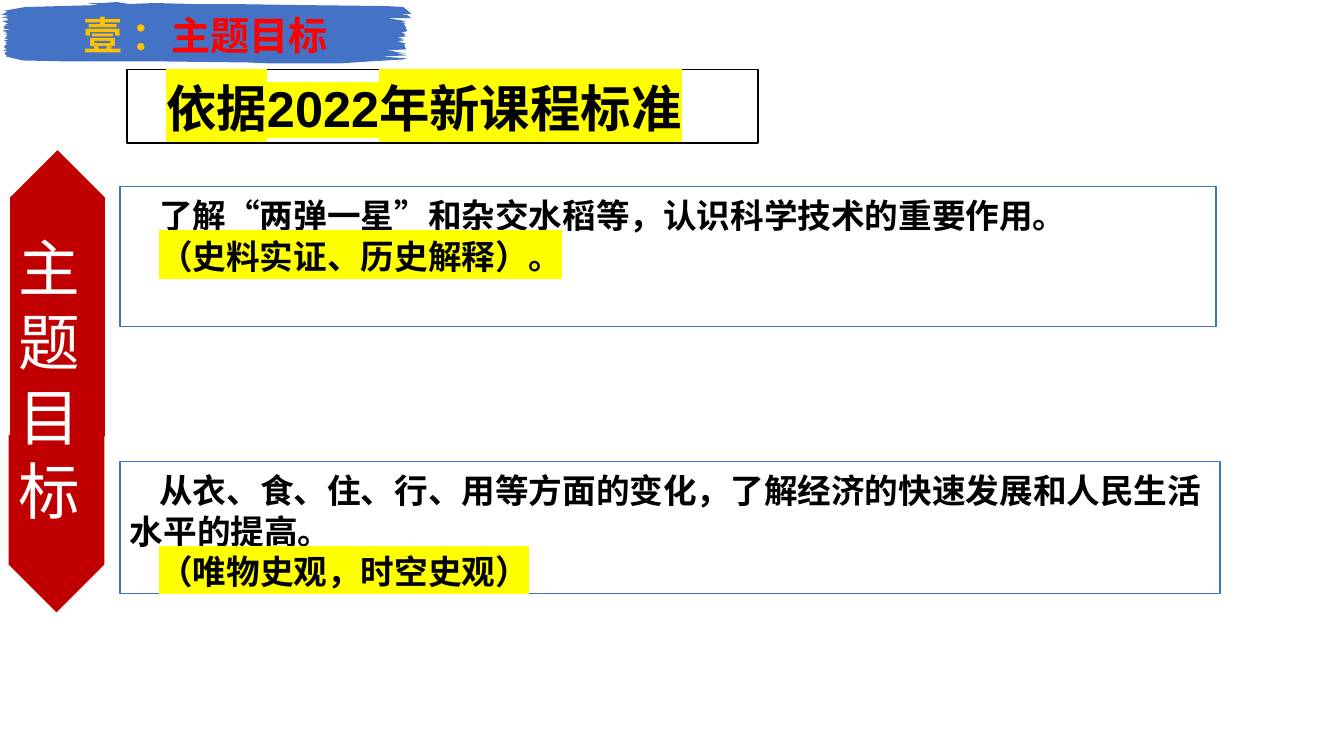
from dataclasses import dataclass

from lxml import etree
from pptx import Presentation
from pptx.dml.color import RGBColor
from pptx.enum.shapes import MSO_SHAPE
from pptx.enum.text import MSO_ANCHOR, PP_ALIGN
from pptx.oxml.ns import qn
from pptx.util import Pt

RECT, PENTAGON = MSO_SHAPE.RECTANGLE, MSO_SHAPE.PENTAGON
TOP, MIDDLE = MSO_ANCHOR.TOP, MSO_ANCHOR.MIDDLE
LEFT, CENTER = PP_ALIGN.LEFT, PP_ALIGN.CENTER
PX = 9144


@dataclass(frozen=True)
class Theme:
    blue: str = "4472C4"
    red: str = "C00000"
    gold: str = "FFC000"
    accent: str = "FF0000"
    ink: str = "000000"
    paper: str = "FFFFFF"
    marker: str = "FFFF00"
    cjk: str = "Noto Sans CJK SC"
    sans: str = "Arial"
    serif: str = "Times New Roman"
    banner: int = 28
    side: int = 44
    title: int = 36
    body: int = 24
    leading: float = 1.2
    indent: int = 29


@dataclass(frozen=True)
class Span:
    text: str
    color: str = ""
    font: str = ""
    marked: bool = False


T = Theme()

BRUSH_EDGE = [
    (1, 17), (7, 18), (8, 20), (2, 21), (5, 22), (9, 24), (5, 24), (7, 25),
    (3, 26), (5, 27), (3, 28), (11, 30), (4, 30), (3, 31), (9, 32), (5, 32),
    (8, 33), (4, 34), (11, 35), (7, 35), (6, 37), (4, 38), (9, 39), (4, 40),
    (8, 42), (5, 42), (7, 44), (5, 45), (4, 47), (7, 48), (5, 48), (7, 49),
    (3, 50), (8, 51), (5, 52), (5, 54), (7, 55), (6, 56), (22, 60), (69, 61),
    (163, 61), (245, 62), (269, 63), (336, 63), (366, 61), (400, 59),
    (404, 58), (378, 56), (404, 55), (393, 53), (403, 53), (388, 51),
    (393, 51), (383, 50), (403, 49), (402, 47), (401, 45), (402, 43),
    (394, 41), (401, 40), (394, 39), (401, 39), (394, 37), (404, 36),
    (400, 35), (402, 34), (398, 32), (404, 31), (401, 24), (402, 23),
    (398, 22), (403, 21), (384, 18), (408, 18), (404, 15), (396, 14),
    (408, 14), (405, 11), (400, 7), (382, 6), (296, 5), (228, 4), (191, 4),
    (154, 3), (128, 4), (116, 2), (101, 3), (86, 3), (98, 5), (25, 7),
    (2, 11), (8, 11), (3, 14), (0, 14), (9, 16),
]


def rgb(value):
    return RGBColor.from_string(value)


def style(sp, fill, line=None):
    sp.shadow.inherit = False
    sp.fill.solid()
    sp.fill.fore_color.rgb = rgb(fill)
    if line:
        sp.line.color.rgb = rgb(line)
        sp.line.width = Pt(1)
    else:
        sp.line.fill.background()
    return sp


def add_block(shapes, kind, box, fill, line=None, rotation=0):
    sp = shapes.add_shape(kind, *(v * PX for v in box))
    sp.rotation = rotation
    return style(sp, fill, line)


def add_brush(shapes, points, fill):
    builder = shapes.build_freeform(*points[0], scale=PX)
    builder.add_line_segments(points[1:], close=True)
    return style(builder.convert_to_shape(), fill)


def set_font(font, rpr, name):
    font.name = name
    etree.SubElement(rpr, qn("a:ea")).set("typeface", T.cjk)


def add_span(p, span):
    r = p.add_run()
    r.text = span.text
    rpr = r._r.get_or_add_rPr()
    if span.color:
        r.font.color.rgb = rgb(span.color)
    if span.marked:
        highlight = etree.SubElement(rpr, qn("a:highlight"))
        etree.SubElement(highlight, qn("a:srgbClr")).set("val", T.marker)
    if span.font:
        set_font(r.font, rpr, span.font)


def write(sp, paragraphs, size, color=T.ink, font=T.cjk, bold=True,
          anchor=TOP, align=LEFT, indent=0, top=8, right=10):
    tf = sp.text_frame
    tf.word_wrap = True
    tf.vertical_anchor = anchor
    tf.margin_top = top * PX
    tf.margin_right = right * PX
    for i, spans in enumerate(paragraphs):
        p = tf.add_paragraph() if i else tf.paragraphs[0]
        p.alignment = align
        p.line_spacing = Pt(round(size * T.leading))
        ppr = p._p.get_or_add_pPr()
        ppr.set("marL", "0")
        ppr.set("indent", str(indent * PX))
        p.font.size = Pt(size)
        p.font.bold = bold
        p.font.color.rgb = rgb(color)
        set_font(p.font, ppr.find(qn("a:defRPr")), font)
        for span in spans:
            add_span(p, span)


def add_side_label(shapes, text):
    group = shapes.add_group_shape().shapes
    add_block(group, PENTAGON, (-85, 244, 284, 94), T.red, rotation=270)
    add_block(group, PENTAGON, (-32, 472, 176, 95), T.red, rotation=90)
    label = group.add_textbox(*(v * PX for v in (9, 142, 73, 261)))
    write(label, [[Span(text)]], T.side, T.paper, bold=False, top=86, right=0)


def add_goal(shapes, box, paragraphs):
    sp = add_block(shapes, RECT, box, T.paper, T.blue)
    write(sp, paragraphs, T.body, indent=T.indent)


def main():
    prs = Presentation()
    prs.slide_width, prs.slide_height = 1333 * PX, 750 * PX
    s = prs.slides.add_slide(prs.slide_layouts[6])

    banner = add_brush(s.shapes, BRUSH_EDGE, T.blue)
    write(banner, [[Span("壹 ："), Span("主题目标", T.accent)]], T.banner,
          T.gold, anchor=MIDDLE, align=CENTER)

    add_side_label(s.shapes, "主题目标")

    title = add_block(s.shapes, RECT, (126, 69, 626, 73), T.paper, T.ink)
    write(title, [[Span("依据2022年新课程标准", marked=True)]], T.title,
          font=T.sans, indent=T.indent)

    add_goal(s.shapes, (119, 185, 1087, 139), [
        [Span("了解“两弹一星”和杂交水稻等，认识科学技术的重要作用。")],
        [Span("（史料实证、历史解释", font=T.serif, marked=True),
         Span("）。", marked=True)],
    ])
    add_goal(s.shapes, (119, 458, 1091, 131), [
        [Span("从衣、食、住、行、用等方面的变化，了解经济的快速发展和人民生活水平的提高。")],
        [Span("（唯物史观，时空史观）", marked=True)],
    ])
    prs.save("out.pptx")


if __name__ == "__main__":
    main()
